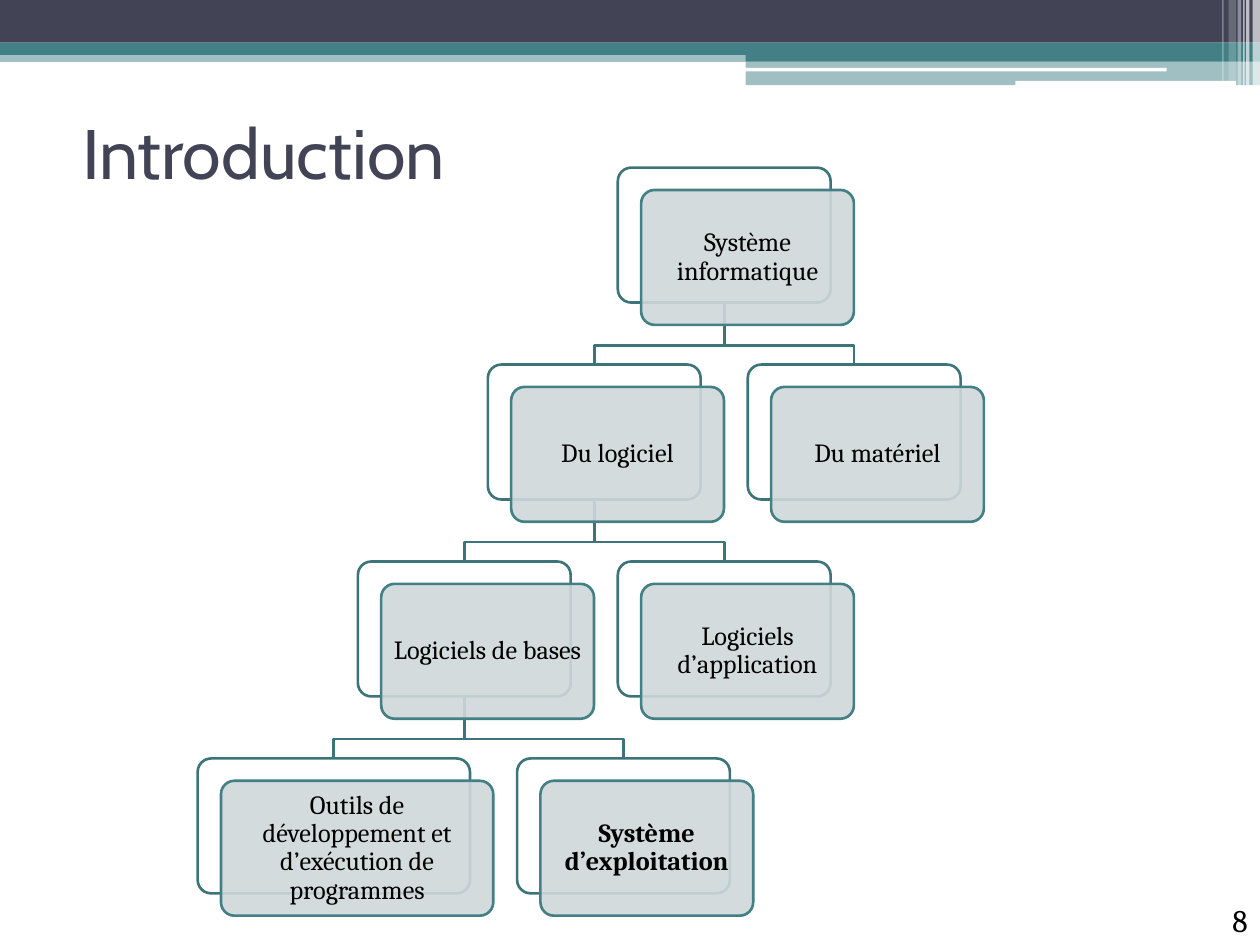
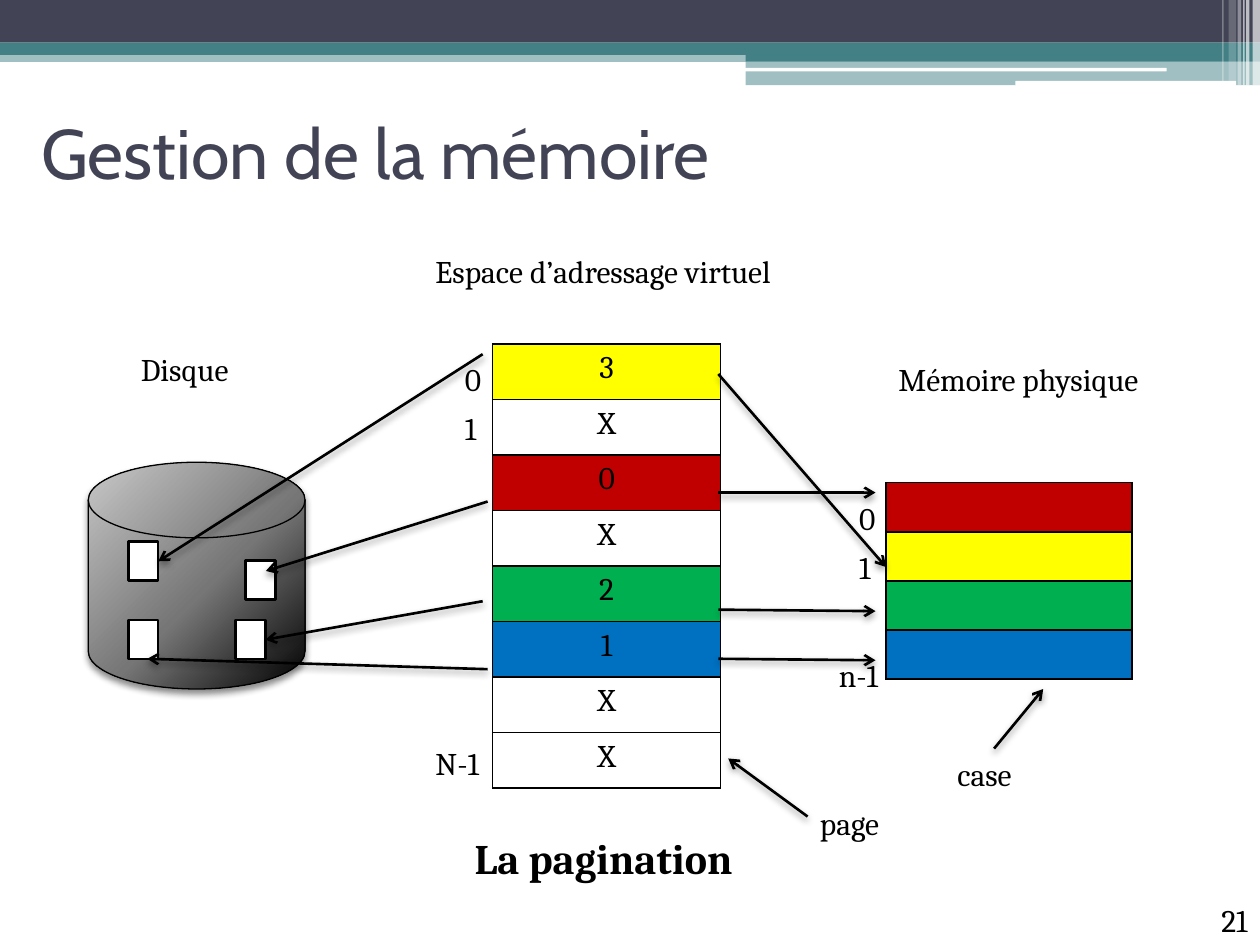
"""Build two course slides: a tree of computer system parts and a paging diagram."""
from pptx import Presentation
from pptx.dml.color import RGBColor
from pptx.enum.shapes import MSO_CONNECTOR, MSO_SHAPE
from pptx.enum.text import MSO_ANCHOR, MSO_AUTO_SIZE, PP_ALIGN
from pptx.oxml import parse_xml
from pptx.oxml.ns import nsdecls, qn
from pptx.util import Cm, Pt

RECT, ROUND = MSO_SHAPE.RECTANGLE, MSO_SHAPE.ROUNDED_RECTANGLE
DISK, LINE = MSO_SHAPE.FLOWCHART_MAGNETIC_DISK, MSO_CONNECTOR.STRAIGHT
LEFT, MID, RIGHT = PP_ALIGN.LEFT, PP_ALIGN.CENTER, PP_ALIGN.RIGHT
MIDDLE, BOTTOM = MSO_ANCHOR.MIDDLE, MSO_ANCHOR.BOTTOM
GROW = MSO_AUTO_SIZE.SHAPE_TO_FIT_TEXT

NAVY = RGBColor(0x42, 0x44, 0x56)
TEAL = RGBColor(0x43, 0x80, 0x86)
DEEP = RGBColor(0x3D, 0x74, 0x7A)
PALE = RGBColor(0xCF, 0xD8, 0xD9)
WHITE = RGBColor(0xFF, 0xFF, 0xFF)
BLACK = RGBColor(0, 0, 0)
GREY = RGBColor(0x76, 0x76, 0x76)
YELLOW = RGBColor(0xFF, 0xFF, 0)
RED = RGBColor(0xC0, 0, 0)
GREEN = RGBColor(0, 0xB0, 0x50)
BLUE = RGBColor(0, 0x70, 0xC0)

HEAD, BODY = "Cabin", "Cambria"
NS = nsdecls("a")
SHADE = ('<a:effectLst %s><a:outerShdw blurRad="50800" dist="25400" dir="5400000" rotWithShape="0">'
         '<a:srgbClr val="000000"><a:alpha val="%d"/></a:srgbClr></a:outerShdw></a:effectLst>')
STEEL = (f'<a:gradFill {NS} rotWithShape="1"><a:gsLst>'
         '<a:gs pos="0"><a:srgbClr val="C8C8C8"/></a:gs>'
         '<a:gs pos="55000"><a:srgbClr val="767676"/></a:gs>'
         '<a:gs pos="100000"><a:srgbClr val="000000"/></a:gs></a:gsLst>'
         '<a:path path="circle"><a:fillToRect l="-40000" t="-90000" r="140000" b="190000"/>'
         '</a:path></a:gradFill>')


def box(slide, kind, x, y, w, h, fill, line=None, alpha=100, width=1.5):
    """Add a filled preset shape, lengths in centimetres."""
    shape = slide.shapes.add_shape(kind, Cm(x), Cm(y), Cm(w), Cm(h))
    shape.shadow.inherit = False
    shape.fill.solid()
    shape.fill.fore_color.rgb = fill
    if alpha < 100:
        tint = shape.element.spPr.find(qn("a:solidFill"))[0]
        tint.append(parse_xml(f'<a:alpha {NS} val="{alpha * 1000}"/>'))
    if line is None:
        shape.line.fill.background()
    else:
        shape.line.color.rgb = line
        shape.line.width = Pt(width)
    return shape


def write(frame, text, size=18, align=LEFT, bold=False, font=BODY, color=BLACK):
    """Put one run of text into the first paragraph of a frame."""
    para = frame.paragraphs[0]
    para.alignment = align
    run = para.add_run()
    run.text = text
    run.font.name = font
    run.font.size = Pt(size)
    run.font.bold = bold
    run.font.color.rgb = color
    return para


deck = Presentation()
deck.slide_width, deck.slide_height = Cm(25.4), Cm(19.05)
layout = deck.slide_layouts[5]
tree = deck.slides.add_slide(layout)
paging = deck.slides.add_slide(layout)

bands = [
    (RECT, 0, 1.02, 25.4, 0.23, TEAL, 50),
    (RECT, 0, 0, 25.4, 0.86, NAVY, 100),
    (RECT, 0, 0.86, 25.4, 0.25, TEAL, 100),
    (RECT, 15.03, 0.99, 10.37, 0.25, TEAL, 100),
    (RECT, 15.03, 1.24, 10.37, 0.48, TEAL, 50),
    (ROUND, 15.01, 1.37, 8.51, 0.07, WHITE, 100),
    (ROUND, 20.47, 1.63, 4.45, 0.1, WHITE, 100),
    (RECT, 25.25, 0, 0.15, 1.73, WHITE, 65),
    (RECT, 25.12, 0, 0.07, 1.73, WHITE, 65),
    (RECT, 25.06, 0, 0.03, 1.73, WHITE, 60),
    (RECT, 24.95, 0, 0.07, 1.73, WHITE, 40),
    (RECT, 24.77, 0, 0.15, 1.63, WHITE, 20),
    (RECT, 24.64, 0, 0.03, 1.63, WHITE, 30),
]
for kind, x, y, w, h, fill, alpha in bands:
    band = box(tree, kind, x, y, w, h, fill, alpha=alpha)
    layout.shapes.element.append(band.element)

for slide, name, x, number in [(tree, "Introduction", 1.4, "8"),
                               (paging, "Gestion de la mémoire", 0.58, "21")]:
    title = slide.shapes.title
    title.left, title.top, title.width, title.height = Cm(x), Cm(1.57), Cm(22.86), Cm(2.97)
    title.text_frame.vertical_anchor = MIDDLE
    write(title.text_frame, name, 40, font=HEAD, color=NAVY)
    foot = slide.shapes.add_textbox(Cm(23.29), Cm(18.03), Cm(2.11), Cm(1.02)).text_frame
    foot.word_wrap = True
    foot.vertical_anchor = BOTTOM
    write(foot, number, align=RIGHT)

TOP, STEP, TALL, WIDE = 3.38, 3.97, 2.72, 4.29
nodes = [
    ("Système informatique", 14.6, 0, WIDE, None),
    ("Du logiciel", 11.98, 1, WIDE, 0),
    ("Du matériel", 17.22, 1, WIDE, 0),
    ("Logiciels de bases", 9.36, 2, WIDE, 1),
    ("Logiciels d’application", 14.6, 2, WIDE, 1),
    ("Outils de développement et d’exécution de programmes", 6.73, 3, 5.49, 3),
    ("Système d’exploitation", 12.57, 3, WIDE, 3),
]
for text, mid, level, w, above in nodes:
    if above is None:
        continue
    start = nodes[above][1]
    end = TOP + level * STEP
    low = end - STEP + TALL
    path = tree.shapes.build_freeform(Cm(start), Cm(low))
    path.add_line_segments([(Cm(start), Cm(low + 0.86)), (Cm(mid), Cm(low + 0.86)),
                            (Cm(mid), Cm(end))], close=False)
    link = path.convert_to_shape()
    link.shadow.inherit = False
    link.fill.background()
    link.line.color.rgb = DEEP
    link.line.width = Pt(1.5)

for text, mid, level, w, above in nodes:
    x, y = mid - w / 2, TOP + level * STEP
    back = box(tree, ROUND, x, y, w, TALL, WHITE, DEEP)
    front = box(tree, ROUND, x + 0.47, y + 0.45, w, TALL, PALE, TEAL, 90)
    back.adjustments[0] = front.adjustments[0] = 0.1
    frame = front.text_frame
    frame.word_wrap = True
    frame.vertical_anchor = MIDDLE
    frame.margin_left = frame.margin_right = Cm(0.15)
    frame.margin_top = frame.margin_bottom = Cm(0.15)
    para = write(frame, text, 15, MID, bold=text == "Système d’exploitation")
    para.line_spacing = 0.9

pages = [("3", YELLOW), ("X", WHITE), ("0", RED), ("X", WHITE),
         ("2", GREEN), ("1", BLUE), ("X", WHITE), ("X", WHITE)]
cases = [("", RED), ("", YELLOW), ("", GREEN), ("", BLUE)]
for rows, x, y, w, h in [(pages, 9.93, 6.93, 4.6, 1.12), (cases, 17.86, 9.73, 4.96, 0.99)]:
    grid = paging.shapes.add_table(len(rows), 1, Cm(x), Cm(y), Cm(w), Cm(h * len(rows))).table
    grid.first_row = grid.horz_banding = False
    for i, (text, fill) in enumerate(rows):
        grid.rows[i].height = Cm(h)
        cell = grid.cell(i, 0)
        cell.margin_bottom = 0
        props = cell._tc.get_or_add_tcPr()
        for side in "LRTB":
            props.append(parse_xml(f'<a:ln{side} {NS} w="12700"><a:solidFill>'
                                   f'<a:srgbClr val="{BLACK}"/></a:solidFill></a:ln{side}>'))
        cell.fill.solid()
        cell.fill.fore_color.rgb = fill
        if text:
            write(cell.text_frame, text, align=MID)

disk = box(paging, DISK, 1.78, 9.32, 4.37, 4.57, GREY, BLACK, width=0.75)
props = disk.element.spPr
props.replace(props.find(qn("a:solidFill")), parse_xml(STEEL))
props.replace(props.find(qn("a:effectLst")), parse_xml(SHADE % (NS, 45000)))

spots = [(4.95, 11.3), (4.75, 12.5), (2.59, 12.5), (2.59, 10.92)]
blocks = [box(paging, RECT, x, y, 0.6, 0.79, WHITE, BLACK) for x, y in spots]

arrows = [
    (14.48, 7.54, 17.86, 11.43, None),
    (14.48, 9.93, 17.65, 9.93, None),
    (14.48, 12.29, 17.65, 12.32, None),
    (14.48, 13.28, 17.65, 13.31, None),
    (9.83, 10.11, 5.36, 11.51, None),
    (9.73, 7.14, 3.19, 11.31, blocks[3]),
    (9.73, 12.12, 5.35, 12.9, blocks[1]),
    (9.83, 13.49, 2.97, 13.28, None),
    (16.28, 16.46, 14.68, 15.29, None),
    (20.04, 15.09, 21.03, 13.89, None),
]
for x, y, right, low, block in arrows:
    arrow = paging.shapes.add_connector(LINE, Cm(x), Cm(y), Cm(right), Cm(low))
    if block is not None:
        arrow.end_connect(block, 3)
    arrow.line.color.rgb = BLACK
    arrow.line.width = Pt(1.5)
    props = arrow.element.spPr
    props.find(qn("a:ln")).append(parse_xml(f'<a:tailEnd {NS} type="arrow"/>'))
    props.append(parse_xml(SHADE % (NS, 40000)))

labels = [
    ("Mémoire physique", 17.86, 7.14, 5.82, 18),
    ("Espace d’adressage virtuel", 8.53, 4.95, 7.98, 18),
    ("Disque", 2.59, 6.93, 2.67, 18),
    ("La pagination", 9.32, 16.66, 8.74, 24),
    ("case", 19.05, 15.09, 1.73, 18),
    ("page", 16.28, 16.08, 2.24, 18),
    ("0", 9.12, 7.14, 0.91, 18),
    ("1", 9.12, 8.13, 0.79, 18),
    ("N-1", 8.53, 14.88, 1.52, 18),
    ("0", 17.07, 9.93, 0.91, 18),
    ("1", 17.07, 10.92, 0.79, 18),
    ("n-1", 16.66, 13.11, 1.4, 18),
]
for text, x, y, w, size in labels:
    frame = paging.shapes.add_textbox(Cm(x), Cm(y), Cm(w), Cm(1.02)).text_frame
    frame.word_wrap = text in ("La pagination", "page")
    frame.auto_size = GROW
    write(frame, text, size, bold=size == 24)

deck.save("out.pptx")
